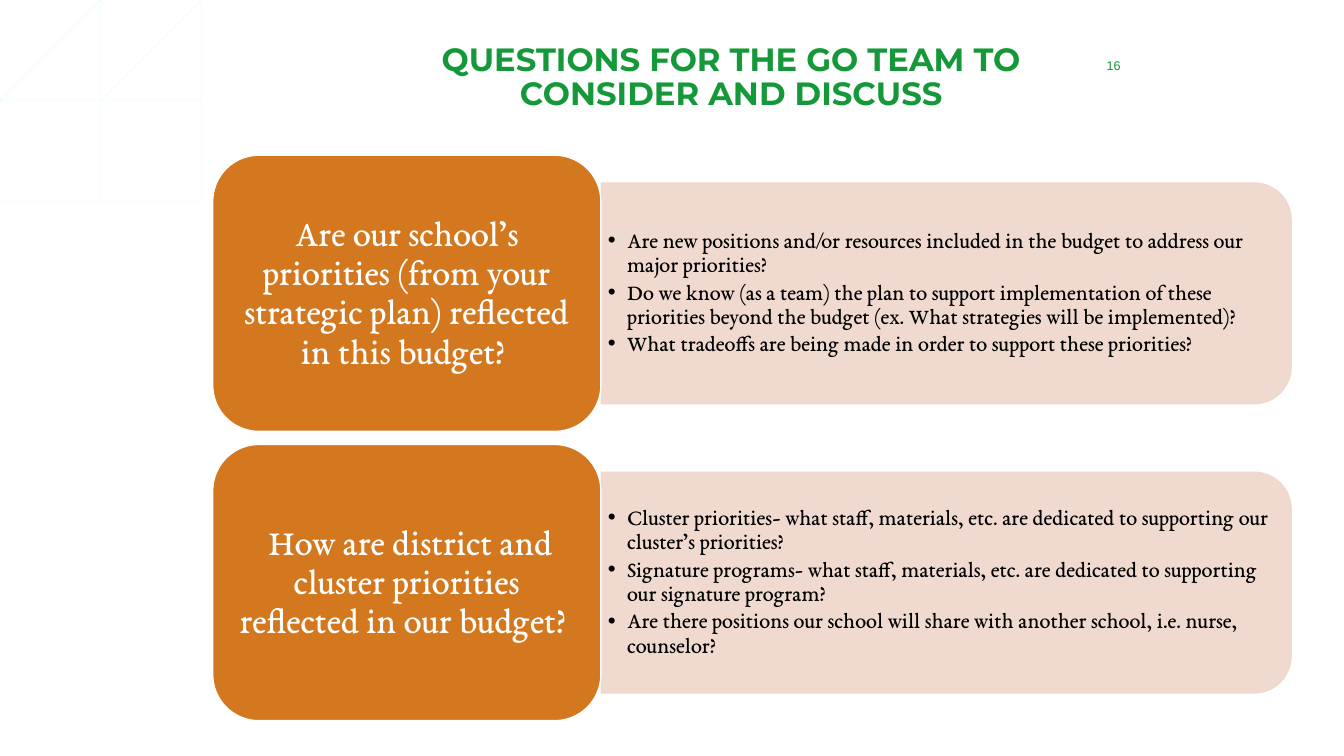
import math
import pptx
import pptx.util
import pptx.dml.color
import pptx.enum.shapes
import pptx.enum.text
import pptx.oxml
import pptx.oxml.ns

Inches = pptx.util.Inches
Pt = pptx.util.Pt
RGBColor = pptx.dml.color.RGBColor
SHAPE = pptx.enum.shapes.MSO_SHAPE
ALIGN = pptx.enum.text.PP_ALIGN
ANCHOR = pptx.enum.text.MSO_ANCHOR
qn = pptx.oxml.ns.qn
SPACE = pptx.oxml.ns.nsdecls("a")

GREEN = RGBColor(0x15, 0x98, 0x39)
ORANGE = RGBColor(0xD4, 0x78, 0x1F)
PEACH = RGBColor(0xEF, 0xD6, 0xCB)
SKY = RGBColor(0xBA, 0xF0, 0xFF)
WHITE = RGBColor(0xFF, 0xFF, 0xFF)
BLACK = RGBColor(0, 0, 0)


def set_frame(shape, anchor, side, top):
    frame = shape.text_frame
    frame.word_wrap = True
    frame.vertical_anchor = anchor
    frame.margin_left = frame.margin_right = Inches(side)
    frame.margin_top = frame.margin_bottom = Inches(top)
    return frame


def add_text(para, text, font, size, color, align, bold=False):
    para.alignment = align
    run = para.add_run()
    run.text = text
    run.font.name = font
    run.font.size = Pt(size)
    run.font.color.rgb = color
    run.font.bold = bold


deck = pptx.Presentation()
deck.slide_width = Inches(13.33)
deck.slide_height = Inches(7.5)
slide = deck.slides.add_slide(deck.slide_layouts[6])
shapes = slide.shapes

RINGS = 17
DROP = 0.16
rings = None
for ring in range(RINGS):
    outer = 2.46 - 2.14 * ring / (RINGS - 1)
    steps = 4 + int(outer * 3)
    points = []
    for radius, order in ((outer, 1), (outer - 0.02, -1)):
        start = math.asin(DROP / radius)
        turn = (math.pi / 2 - start) / steps
        arc = [(radius * math.cos(start + turn * step),
                radius * math.sin(start + turn * step) - DROP)
               for step in range(steps + 1)]
        points += arc[::order]
    if rings is None:
        rings = shapes.build_freeform(*points[0], scale=Inches(1))
    else:
        rings.move_to(*points[0])
    rings.add_line_segments(points[1:], close=True)
arcs = rings.convert_to_shape()
arcs.shadow.inherit = False
arcs.fill.solid()
arcs.fill.fore_color.rgb = SKY
arcs.line.fill.background()

title = shapes.add_textbox(Inches(3.47), Inches(0.38), Inches(7.57), Inches(0.84))
para = set_frame(title, ANCHOR.TOP, 0.1, 0.05).paragraphs[0]
para.line_spacing = 0.9
add_text(para, "QUESTIONS FOR THE GO TEAM TO CONSIDER AND DISCUSS",
         "Montserrat", 23, GREEN, ALIGN.CENTER, True)

number = shapes.add_textbox(Inches(10.64), Inches(0.5), Inches(0.81), Inches(0.3))
para = set_frame(number, ANCHOR.MIDDLE, 0.1, 0.05).paragraphs[0]
add_text(para, "16", "Arial", 9, GREEN, ALIGN.CENTER)

ROWS = [
    ("Are our school’s priorities (from your strategic plan) reflected in this budget? ", [
        "Are new positions and/or resources included in the budget to address our major priorities?",
        "Do we know (as a team) the plan to support implementation of these priorities "
        "beyond the budget (ex. What strategies will be implemented)?",
        "What tradeoffs are being made in order to support these priorities?",
    ]),
    (" How are district and cluster priorities reflected in our budget? ", [
        "Cluster priorities- what staff, materials, etc. are dedicated to supporting "
        "our cluster’s priorities?",
        "Signature programs- what staff, materials, etc. are dedicated to supporting "
        "our signature program?",
        "Are there positions our school will share with another school, i.e. nurse, counselor?",
    ]),
]

for row, (question, points) in enumerate(ROWS):
    top = 1.54 + 2.87 * row

    panel = shapes.add_shape(SHAPE.ROUND_2_SAME_RECTANGLE, Inches(8.29),
                             Inches(top - 2.05), Inches(2.19), Inches(6.84))
    panel.rotation = 90
    panel.adjustments[0] = 0.167
    panel.adjustments[1] = 0
    panel.shadow.inherit = False
    panel.line.width = Pt(1)
    for fill in (panel.fill, panel.line.fill):
        fill.solid()
        fill.fore_color.rgb = PEACH
    for color in panel.element.spPr.iter(qn("a:srgbClr")):
        color.append(pptx.oxml.parse_xml(f'<a:alpha {SPACE} val="90000"/>'))

    detail = shapes.add_textbox(Inches(5.96), Inches(top + 0.38), Inches(6.74), Inches(1.97))
    frame = set_frame(detail, ANCHOR.MIDDLE, 0.07, 0.03)
    for index, point in enumerate(points):
        para = frame.add_paragraph() if index else frame.paragraphs[0]
        para.level = 1
        para.line_spacing = 0.9
        para.space_before = Pt(2.4 if index else 0)
        add_text(para, point, "EB Garamond", 16, BLACK, ALIGN.LEFT)
        props = para._p.get_or_add_pPr()
        props.set("marL", str(Inches(0.19)))
        props.set("indent", str(-Inches(0.19)))
        for mark in (f'<a:buClr {SPACE}><a:srgbClr val="{BLACK}"/></a:buClr>',
                     f'<a:buFont {SPACE} typeface="Arial"/>',
                     f'<a:buChar {SPACE} char="•"/>'):
            props.append(pptx.oxml.parse_xml(mark))

    card = shapes.add_shape(SHAPE.ROUNDED_RECTANGLE, Inches(2.11), Inches(top),
                            Inches(3.85), Inches(2.74))
    card.adjustments[0] = 0.167
    card.shadow.inherit = False
    card.fill.solid()
    card.fill.fore_color.rgb = ORANGE
    card.line.color.rgb = WHITE
    card.line.width = Pt(1)
    para = set_frame(card, ANCHOR.MIDDLE, 0.11, 0.05).paragraphs[0]
    para.line_spacing = 0.9
    add_text(para, question, "EB Garamond", 26, WHITE, ALIGN.CENTER)

deck.save("out.pptx")
